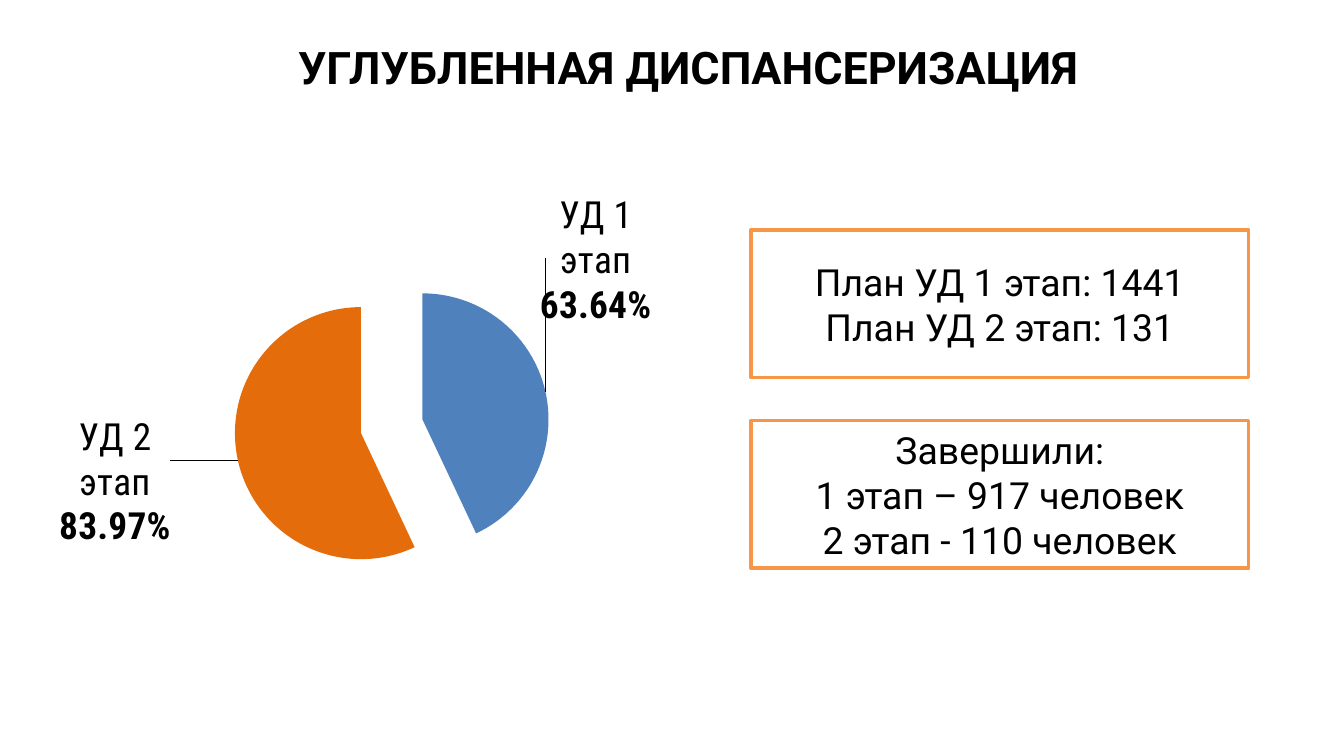
from dataclasses import dataclass

from lxml.etree import fromstring
from pptx import Presentation
from pptx.chart.data import CategoryChartData
from pptx.dml.color import RGBColor
from pptx.enum.chart import XL_CHART_TYPE as ChartType, XL_LABEL_POSITION as LabelPosition
from pptx.enum.shapes import MSO_SHAPE as Shape
from pptx.enum.text import MSO_ANCHOR as Anchor, PP_ALIGN as Align
from pptx.oxml.ns import nsdecls
from pptx.util import Inches, Pt


@dataclass(frozen=True)
class Theme:
    """Colours, fonts and type sizes of the slide."""
    text: RGBColor = RGBColor(0, 0, 0)
    panel: RGBColor = RGBColor(255, 255, 255)
    border: RGBColor = RGBColor.from_string("F79646")
    slices: tuple = (RGBColor.from_string("4F81BD"), RGBColor.from_string("E46C0A"))
    body_font: str = "Roboto"
    label_font: str = "Roboto Condensed"
    chart_font: str = "Calibri"
    title_size: Pt = Pt(24)
    body_size: Pt = Pt(20)
    chart_size: Pt = Pt(18)


THEME = Theme()
WIDTH = Inches(10)
HEIGHT = WIDTH * 9 // 16
CELL = WIDTH // 100

TITLE = "УГЛУБЛЕННАЯ ДИСПАНСЕРИЗАЦИЯ"
PANELS = (
    "План УД 1 этап: 1441\vПлан УД 2 этап: 131",
    "Завершили:\n1 этап – 917 человек\v2 этап - 110 человек",
)
STAGES = (
    ("УД 1 этап", 43, "63.64%", (-0.02, -0.28)),
    ("УД 2 этап", 57, "83.97%", (-0.09, -0.1)),
)


def place(*box):
    """Turn square grid cells, a hundred across the slide, into lengths."""
    return [round(cells * CELL) for cells in box]


def style_font(font, size, name=THEME.body_font, bold=False):
    """Set the size, face, weight and colour of a font."""
    font.size, font.name, font.bold = size, name, bold
    font.color.rgb = THEME.text


def write_text(text_frame, text, size, bold=False):
    """Write centred text in the middle of its frame."""
    text_frame.word_wrap = True
    text_frame.vertical_anchor = Anchor.MIDDLE
    text_frame.text = text
    for paragraph in text_frame.paragraphs:
        paragraph.alignment = Align.CENTER
        style_font(paragraph.font, size, bold=bold)
        for run in paragraph.runs:
            style_font(run.font, size, bold=bold)


def manual_layout(**settings):
    """Make a chart layout element."""
    parts = "".join(f'<c:{key} val="{value}"/>' for key, value in settings.items())
    return fromstring(f'<c:layout {nsdecls("c")}><c:manualLayout>{parts}'
                      '</c:manualLayout></c:layout>')


def set_layout(element, position, layout):
    """Replace the layout of a chart element."""
    for old in element.xpath("c:layout"):
        element.remove(old)
    element.insert(position, layout)


def add_title(slide, box):
    """Add the heading."""
    shape = slide.shapes.add_textbox(*place(*box))
    write_text(shape.text_frame, TITLE, THEME.title_size, bold=True)


def add_panels(slide, box, gap=3.2):
    """Stack the bordered panels in equal rows."""
    left, top, width, height = box
    row = (height - gap * (len(PANELS) - 1)) / len(PANELS)
    for index, text in enumerate(PANELS):
        shape = slide.shapes.add_shape(
            Shape.RECTANGLE, *place(left, top + index * (row + gap), width, row))
        shape.shadow.inherit = False
        shape.fill.solid()
        shape.fill.fore_color.rgb = THEME.panel
        shape.line.color.rgb = THEME.border
        shape.line.width = Pt(2)
        write_text(shape.text_frame, text, THEME.body_size)


def add_label(point, name, percent):
    """Label a slice with its stage and a bold percentage."""
    label = point.data_label
    label.position = LabelPosition.OUTSIDE_END
    label.text_frame.text = f"{name}\n{percent}"
    for paragraph, bold in zip(label.text_frame.paragraphs, (False, True)):
        for run in paragraph.runs:
            style_font(run.font, THEME.body_size, THEME.label_font, bold)


def add_pie(slide, box):
    """Add the exploded pie of the two stages."""
    data = CategoryChartData()
    data.categories = [stage[0] for stage in STAGES]
    data.add_series("Series 1", [stage[1] for stage in STAGES])
    chart = slide.shapes.add_chart(ChartType.PIE, *place(*box), data).chart
    chart.has_legend = chart.has_title = False
    style_font(chart.font, THEME.chart_size, THEME.chart_font)
    plot = chart.plots[0]
    plot.vary_by_categories = True
    series = plot.series[0]

    labels = series.data_labels
    labels.show_value = False
    labels.show_percentage = labels.show_category_name = True
    style_font(labels.font, THEME.body_size, THEME.label_font)
    for index, (name, _, percent, _) in enumerate(STAGES):
        point = series.points[index]
        point.format.fill.solid()
        point.format.fill.fore_color.rgb = THEME.slices[index]
        add_label(point, name, percent)

    series_xml = series._element
    for label_xml, stage in zip(series_xml.xpath("c:dLbls/c:dLbl"), STAGES):
        x, y = stage[3]
        set_layout(label_xml, 1, manual_layout(x=x, y=y))
        for tag, shown in (("showVal", 0), ("showCatName", 1), ("showPercent", 1)):
            label_xml.xpath(f"c:{tag}")[0].set("val", str(shown))
    for old in series_xml.xpath("c:explosion"):
        series_xml.remove(old)
    series_xml.xpath("c:dPt")[0].addprevious(
        fromstring(f'<c:explosion {nsdecls("c")} val="25"/>'))
    set_layout(series_xml.getparent().getparent(), 0, manual_layout(
        layoutTarget="inner", xMode="edge", yMode="edge", x=0.26, y=0.16, w=0.48, h=0.67))


def main():
    """Build and save the slide."""
    presentation = Presentation()
    presentation.slide_width, presentation.slide_height = WIDTH, HEIGHT
    slide = presentation.slides.add_slide(presentation.slide_layouts[6])
    add_title(slide, (20.1, 1.4, 62.2, 7.1))
    add_pie(slide, (4.4, 14.4, 49.5, 35))
    add_panels(slide, (55.9, 17.1, 37, 25.2))
    presentation.save("out.pptx")


if __name__ == "__main__":
    main()
